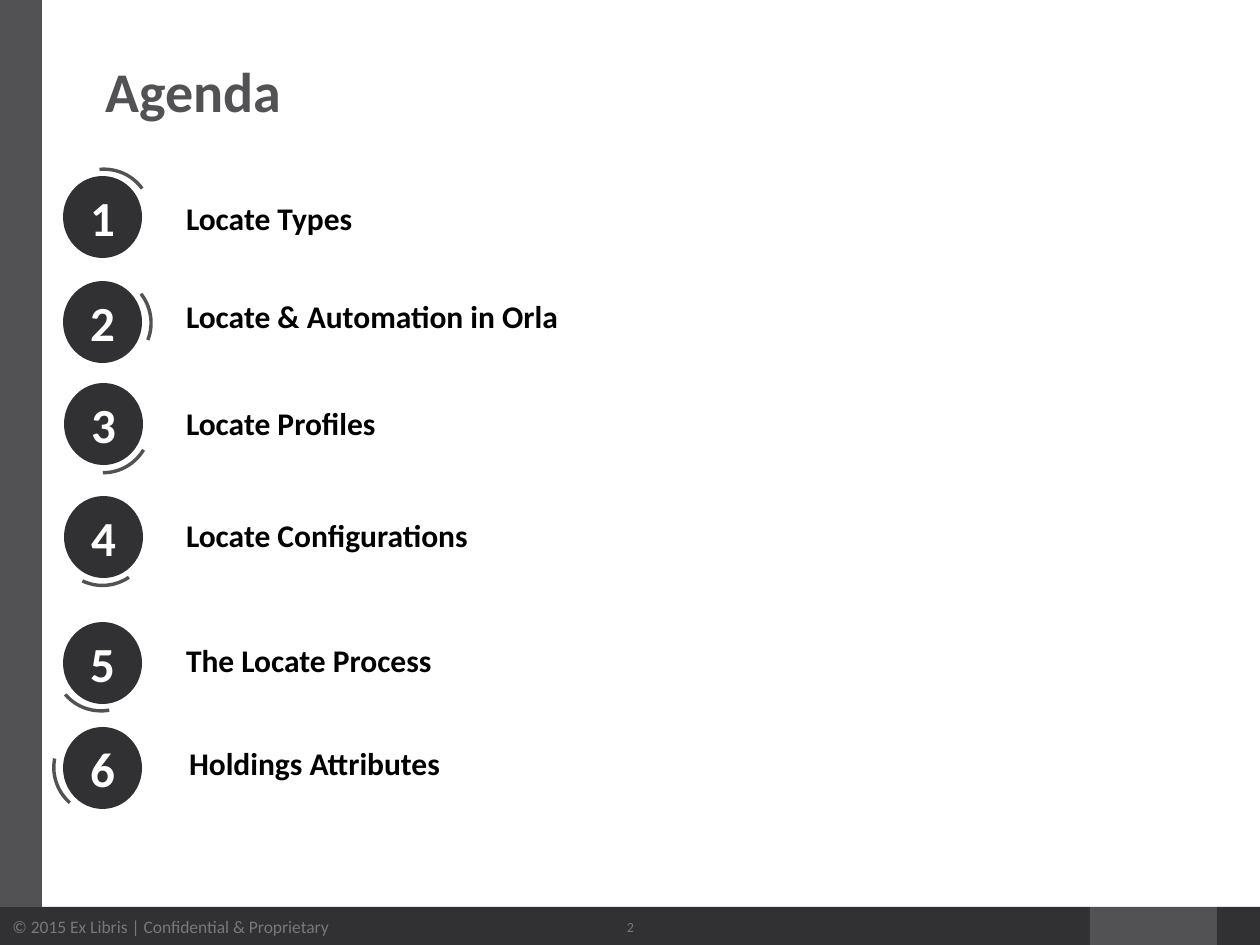
from pptx import Presentation
from pptx.dml.color import RGBColor
from pptx.enum.shapes import MSO_SHAPE
from pptx.enum.text import MSO_ANCHOR, PP_ALIGN
from pptx.util import Pt

PX = 914400 / 126
COLORS = {"dark": "313133", "gray": "525254", "muted": "787878",
          "white": "FFFFFF", "black": "000000"}
FONT = "Calibri"

# Number, topic, badge left and top, arc rotation, topic left and top
AGENDA = [
    ("1", "Locate Types", 57, 171, 323.6, 180, 174),
    ("2", "Locate & Automation in Orla", 57, 276, 21, 180, 272),
    ("3", "Locate Profiles", 58, 378, 90, 180, 379),
    ("4", "Locate Configurations", 58, 491, 115, 180, 491),
    ("5", "The Locate Process", 57, 617, 139.1, 180, 616),
    ("6", "Holdings Attributes", 57, 722, 190.5, 183, 719),
]
BADGE_WIDTH, BADGE_HEIGHT = 91, 93
ARC_ADJUSTMENTS = (181.725, 0.424, 0.035)


def px(*lengths):
    return [round(length * PX) for length in lengths]


def color(name):
    return RGBColor.from_string(COLORS[name])


def set_all(target, values):
    for name, value in values.items():
        setattr(target, name, value)


def write(shape, text, size, ink, bold=False, align=PP_ALIGN.LEFT,
          anchor=MSO_ANCHOR.MIDDLE, inset=None):
    frame = shape.text_frame
    set_all(frame, {"text": text, "word_wrap": True, "vertical_anchor": anchor})
    if inset is not None:
        sides = ("left", "top", "right", "bottom")
        set_all(frame, {f"margin_{side}": px(inset)[0] for side in sides})
    paragraph = frame.paragraphs[0]
    paragraph.alignment = align
    font = paragraph.runs[0].font
    set_all(font, {"name": FONT, "size": Pt(size), "bold": bold})
    font.color.rgb = color(ink)
    return paragraph


def add_filled(shapes, kind, box, fill):
    shape = shapes.add_shape(kind, *px(*box))
    shape.shadow.inherit = False
    shape.fill.solid()
    shape.fill.fore_color.rgb = color(fill)
    shape.line.fill.background()
    return shape


def add_text(shapes, box, text, size, ink, **formats):
    return write(shapes.add_textbox(*px(*box)), text, size, ink, **formats)


def add_badge(shapes, number, left, top, rotation):
    badge = shapes.add_group_shape().shapes

    def centered(width, height):
        return (left + (BADGE_WIDTH - width) // 2,
                top + (BADGE_HEIGHT - height) // 2, width, height)

    add_filled(badge, MSO_SHAPE.OVAL, centered(BADGE_WIDTH, BADGE_HEIGHT), "white")
    arc = add_filled(badge, MSO_SHAPE.BLOCK_ARC, centered(101, 98), "gray")
    for index, value in enumerate(ARC_ADJUSTMENTS):
        arc.adjustments[index] = value
    arc.rotation = rotation
    disc = add_filled(badge, MSO_SHAPE.OVAL, centered(79, 82), "dark")
    write(disc, number, 28, "white", bold=True, align=PP_ALIGN.CENTER)


def add_frame(shapes):
    # Footer band and side bar
    footer = add_filled(shapes, MSO_SHAPE.RECTANGLE, (0, 907, 1090, 40), "dark")
    write(footer, "© 2015 Ex Libris | Confidential & Proprietary", 10, "muted")
    add_filled(shapes, MSO_SHAPE.RECTANGLE, (1090, 907, 127, 40), "gray")
    add_filled(shapes, MSO_SHAPE.RECTANGLE, (1217, 907, 43, 40), "dark")
    add_filled(shapes, MSO_SHAPE.RECTANGLE, (0, 0, 42, 907), "gray")
    # Slide number
    add_text(shapes, (557, 902, 147, 49), "2", 8, "muted", align=PP_ALIGN.CENTER)


def add_title(title, text):
    left, top, width, height = px(93, 58, 1071, 150)
    set_all(title, {"left": left, "top": top, "width": width, "height": height})
    heading = write(title, text, 32, "gray", bold=True, anchor=MSO_ANCHOR.TOP)
    heading.line_spacing = 0.9


def main():
    deck = Presentation()
    deck.slide_width, deck.slide_height = px(1260, 945)
    slide = deck.slides.add_slide(deck.slide_layouts[5])
    shapes = slide.shapes
    add_frame(shapes)
    add_title(shapes.title, "Agenda")
    # Numbered topics
    for number, topic, left, top, rotation, topic_left, topic_top in AGENDA:
        add_badge(shapes, number, left, top, rotation)
        add_text(shapes, (topic_left, topic_top, 765, 88), topic, 18, "black",
                 bold=True, inset=6)
    deck.save("out.pptx")


if __name__ == "__main__":
    main()
